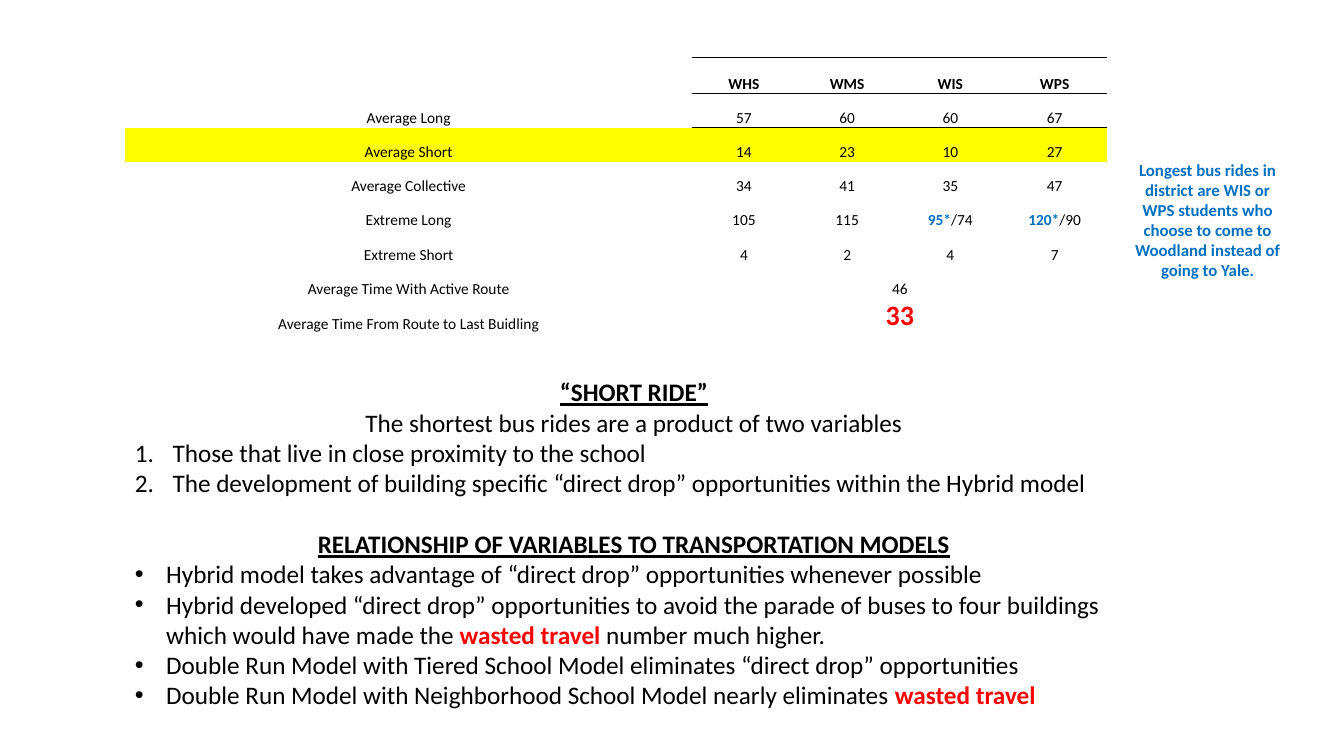
"""Build the slide on bus ride times and the short ride variables."""
from lxml import etree
from pptx import Presentation
from pptx.dml.color import RGBColor
from pptx.enum.text import MSO_ANCHOR, MSO_AUTO_SIZE, PP_ALIGN
from pptx.oxml.ns import qn
from pptx.util import Cm, Pt

BLACK = RGBColor(0, 0, 0)
BLUE = RGBColor(0x00, 0x70, 0xC0)
RED = RGBColor(0xFF, 0, 0)
YELLOW = RGBColor(0xFF, 0xFF, 0)
CENTER, LEFT = PP_ALIGN.CENTER, PP_ALIGN.LEFT
BOTTOM = MSO_ANCHOR.BOTTOM
GROW = MSO_AUTO_SIZE.SHAPE_TO_FIT_TEXT
FONT = "Calibri"
NO_GRID_STYLE = "{2D5ABB26-0587-4C30-8999-92F81FD0307C}"

SCHOOLS = ["WHS", "WMS", "WIS", "WPS"]
RIDES = [
    ("Average Long", ["57", "60", "60", "67"]),
    ("Average Short", ["14", "23", "10", "27"]),
    ("Average Collective", ["34", "41", "35", "47"]),
    ("Extreme Long", ["105", "115", [("95*", BLUE), ("/74", BLACK)],
                      [("120*", BLUE), ("/90", BLACK)]]),
    ("Extreme Short", ["4", "2", "4", "7"]),
    ("Average Time With Active Route", ["46"]),
    ("Average Time From Route to Last Buidling", [[("33", RED)]]),
]
HIGHLIGHT = "Average Short"
BIG_SIZE = 20

NOTES = [
    ("heading", "“SHORT RIDE”"),
    ("center", "The shortest bus rides are a product of two variables"),
    ("number", "Those that live in close proximity to the school"),
    ("number", "The development of building specific “direct drop” opportunities within the Hybrid model"),
    ("heading", "RELATIONSHIP OF VARIABLES TO TRANSPORTATION MODELS"),
    ("bullet", "Hybrid model takes advantage of “direct drop” opportunities whenever possible"),
    ("bullet", [("Hybrid developed “direct drop” opportunities to avoid the parade of buses "
                 "to four buildings which would have made the ", BLACK),
                ("wasted travel ", RED), ("number much higher.", BLACK)]),
    ("bullet", "Double Run Model with Tiered School Model eliminates “direct drop” opportunities"),
    ("bullet", [("Double Run Model with Neighborhood School Model nearly eliminates ", BLACK),
                ("wasted travel", RED)]),
]
CALLOUT = ("Longest bus rides in district are WIS or WPS students who choose to come "
           "to Woodland instead of going to Yale.")

LEFT_EDGE = Cm(3.15)
LABEL_COLS = 10
COL_WIDTHS = [2.51] + [1.31] * (LABEL_COLS - 1) + [2.6] * 3 + [2.66]
HEADER_HEIGHT, ROW_HEIGHT = 0.91, 0.86
LISTS = {"number": (0.95, "buAutoNum", {"type": "arabicPeriod"}),
         "bullet": (0.79, "buChar", {"char": "•"})}


def write(p, content, size, align=CENTER, bold=False, underline=False):
    p.alignment = align
    parts = [(content, BLACK)] if isinstance(content, str) else content
    for text, colour in parts:
        r = p.add_run()
        r.text = text
        r.font.name, r.font.size = FONT, Pt(size)
        r.font.bold = bold or colour != BLACK
        r.font.underline = underline
        r.font.color.rgb = colour


def add_border(cell, side, width):
    tcPr = cell._tc.get_or_add_tcPr()
    ln = etree.Element(qn("a:" + side), w=str(Pt(width)))
    fill = etree.SubElement(ln, qn("a:solidFill"))
    etree.SubElement(fill, qn("a:srgbClr"), val=str(BLACK))
    position = len(tcPr.findall(qn("a:lnT")))
    tcPr.insert(position, ln)


def add_list_mark(p, kind):
    indent, tag, attributes = LISTS[kind]
    pPr = p._p.get_or_add_pPr()
    pPr.set("marL", str(Cm(indent)))
    pPr.set("indent", str(-Cm(indent)))
    etree.SubElement(pPr, qn("a:buFont"), typeface="Arial" if kind == "bullet" else "+mj-lt")
    etree.SubElement(pPr, qn("a:" + tag), attributes)


def add_text_box(s, left, top, width, height):
    tf = s.shapes.add_textbox(left, top, width, height).text_frame
    tf.word_wrap = True
    tf.auto_size = GROW
    return tf


def add_rides_table(s):
    heights = [HEADER_HEIGHT] + [ROW_HEIGHT] * len(RIDES)
    table = s.shapes.add_table(len(heights), len(COL_WIDTHS), LEFT_EDGE, Cm(1.45),
                               Cm(sum(COL_WIDTHS)), Cm(sum(heights))).table
    table.first_row = table.horz_banding = False
    table._tbl.tblPr[0].text = NO_GRID_STYLE
    for column, width in zip(table.columns, COL_WIDTHS):
        column.width = Cm(width)
    for row, height in zip(table.rows, heights):
        row.height = Cm(height)
    for cell in table.iter_cells():
        cell.margin_left = cell.margin_right = cell.margin_top = Cm(0.02)
        cell.margin_bottom = 0
        cell.vertical_anchor = BOTTOM
        cell.fill.background()

    for col, school in enumerate(SCHOOLS, LABEL_COLS):
        cell = table.cell(0, col)
        write(cell.text_frame.paragraphs[0], school, 11, bold=True)
        add_border(cell, "lnT", 0.5)
        add_border(cell, "lnB", 1)
        add_border(table.cell(1, col), "lnT", 1)

    last_col = len(COL_WIDTHS) - 1
    for row, (label, values) in enumerate(RIDES, 1):
        table.cell(row, 0).merge(table.cell(row, LABEL_COLS - 1))
        if len(values) == 1:
            table.cell(row, LABEL_COLS).merge(table.cell(row, last_col))
        write(table.cell(row, 0).text_frame.paragraphs[0], label, 11)
        for col, value in enumerate(values, LABEL_COLS):
            size = BIG_SIZE if value == [("33", RED)] else 11
            write(table.cell(row, col).text_frame.paragraphs[0], value, size)
        if label == HIGHLIGHT:
            for cell in table.rows[row].cells:
                cell.fill.solid()
                cell.fill.fore_color.rgb = YELLOW


def add_notes(s):
    tf = add_text_box(s, LEFT_EDGE, Cm(9.37), Cm(25.65), Cm(8.71))
    for i, (kind, content) in enumerate(NOTES):
        p = tf.add_paragraph() if i else tf.paragraphs[0]
        heading = kind == "heading"
        write(p, content, 18, LEFT if kind in LISTS else CENTER, heading, heading)
        if heading and i:
            p.space_before = Pt(22)
        if kind in LISTS:
            add_list_mark(p, kind)


def main():
    prs = Presentation()
    prs.slide_width, prs.slide_height = Cm(33.87), Cm(19.05)
    s = prs.slides.add_slide(prs.slide_layouts[6])
    add_rides_table(s)
    add_notes(s)
    tf = add_text_box(s, Cm(28.3), Cm(3.89), Cm(4.27), Cm(3.33))
    write(tf.paragraphs[0], [(CALLOUT, BLUE)], 12)
    prs.save("out.pptx")


if __name__ == "__main__":
    main()
